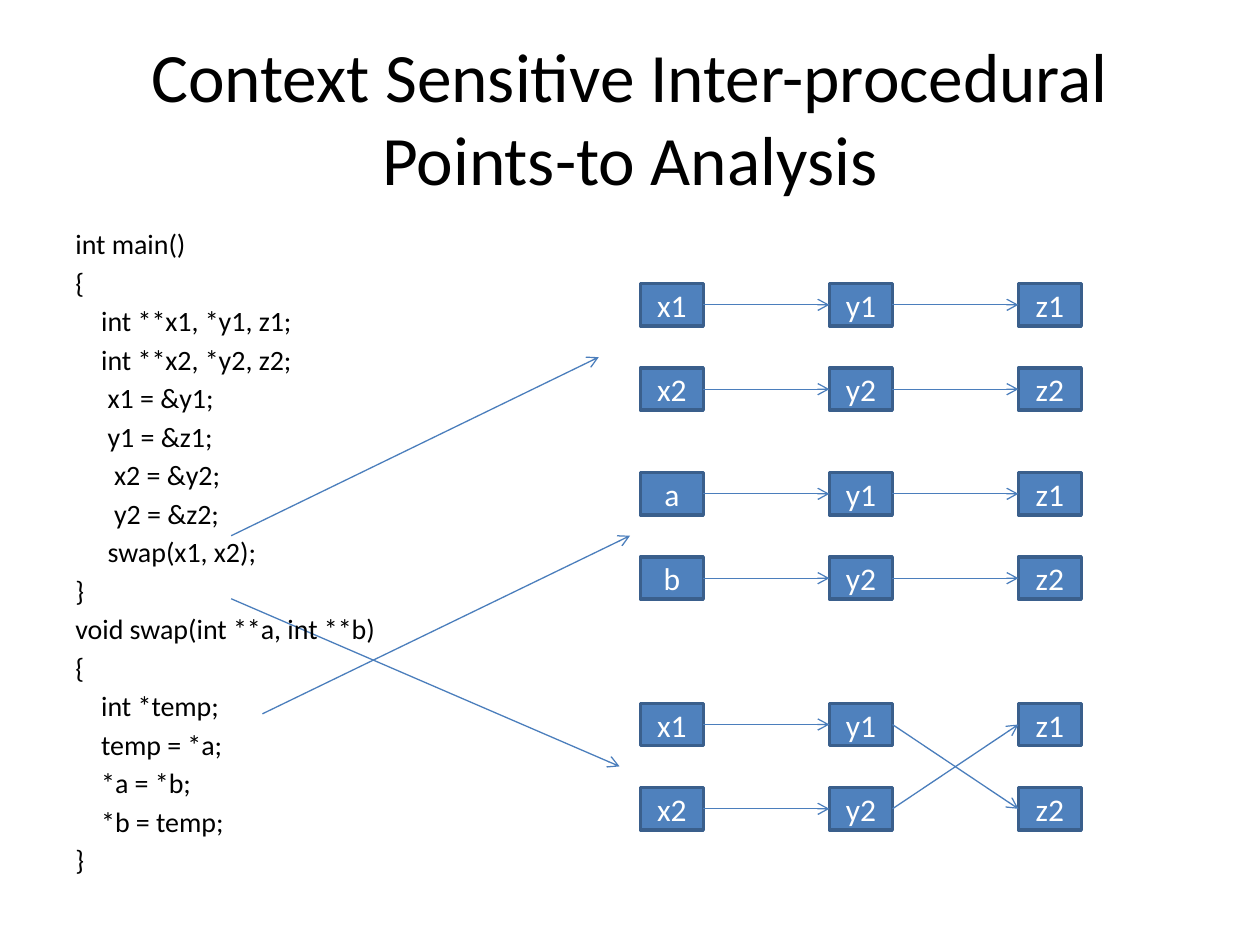
from dataclasses import dataclass

from lxml.etree import SubElement
from pptx import Presentation
from pptx.dml.color import RGBColor as RGB
from pptx.enum.shapes import MSO_CONNECTOR as LINK, MSO_SHAPE as SHAPE
from pptx.enum.text import MSO_ANCHOR as ANCHOR, PP_ALIGN as ALIGN
from pptx.oxml.ns import qn
from pptx.util import Cm, Pt


@dataclass
class Theme:
    font: str = "Calibri"
    ink: RGB = RGB(0x00, 0x00, 0x00)
    pale: RGB = RGB(0xFF, 0xFF, 0xFF)
    fill: RGB = RGB(0x4F, 0x81, 0xBD)
    edge: RGB = RGB(0x3A, 0x5F, 0x8C)
    wire: RGB = RGB(0x4B, 0x7E, 0xBC)
    head: float = 39.6
    code: float = 16
    node: float = 18
    gap: float = 2.8


class Page:
    def __init__(self, slide, theme):
        self.shapes = slide.shapes
        self.theme = theme

    def style(self, para, size, color, align):
        para.alignment = align
        for run in para.runs:
            run.font.name = self.theme.font
            run.font.size = Pt(size)
            run.font.color.rgb = color

    def frame(self, left, top, width, height):
        box = self.shapes.add_textbox(Cm(left), Cm(top), Cm(width), Cm(height))
        box.text_frame.word_wrap = True
        return box.text_frame

    def title(self, text, *area):
        frame = self.frame(*area)
        frame.vertical_anchor = ANCHOR.MIDDLE
        frame.text = text
        self.style(frame.paragraphs[0], self.theme.head, self.theme.ink, ALIGN.CENTER)

    def code(self, lines, step, *area):
        """Set (indent, text) lines, each indent counting steps in cm."""
        frame = self.frame(*area)
        frame.text = "\n".join(text for _, text in lines)
        for para, (indent, _) in zip(frame.paragraphs, lines):
            para.space_before = Pt(self.theme.gap)
            para._p.get_or_add_pPr().set("marL", str(Cm(indent * step)))
            self.style(para, self.theme.code, self.theme.ink, ALIGN.LEFT)

    def node(self, text, left, top, width=1.27, height=0.85):
        box = self.shapes.add_shape(
            SHAPE.RECTANGLE, Cm(left), Cm(top), Cm(width), Cm(height))
        box.shadow.inherit = False
        box.fill.solid()
        box.fill.fore_color.rgb = self.theme.fill
        box.line.color.rgb = self.theme.edge
        box.line.width = Pt(2)
        frame = box.text_frame
        frame.vertical_anchor = ANCHOR.MIDDLE
        frame.text = text
        self.style(frame.paragraphs[0], self.theme.node, self.theme.pale, ALIGN.CENTER)
        return box

    def arrow(self, x1=0, y1=0, x2=0, y2=0):
        line = self.shapes.add_connector(LINK.STRAIGHT, Cm(x1), Cm(y1), Cm(x2), Cm(y2))
        line.line.color.rgb = self.theme.wire
        line.line.width = Pt(0.75)
        SubElement(line.line._get_or_add_ln(), qn("a:tailEnd"), type="arrow")
        SubElement(line._element.spPr, qn("a:effectLst"))
        return line

    def join(self, start, end):
        line = self.arrow()
        line.begin_connect(start, 3)
        line.end_connect(end, 1)

    def graph(self, top, names, cross=False):
        """Draw two rows of three nodes, crossing the last links if asked."""
        rows = [
            [self.node(name, 12.91 + 3.81 * col, top + 2.13 * row - 0.43 * row)
             for col, name in enumerate((first, f"y{row + 1}", f"z{row + 1}"))]
            for row, first in enumerate(names)
        ]
        ends = rows[::-1] if cross else rows
        for row, end in zip(rows, ends):
            self.join(row[0], row[1])
            self.join(row[1], end[2])


CODE = [
    (0, "int main()"),
    (0, "{"),
    (4, "int **x1, *y1, z1;"),
    (4, "int **x2, *y2, z2;"),
    (5, "x1 = &y1;"),
    (5, "y1 = &z1;"),
    (6, "x2 = &y2;"),
    (6, "y2 = &z2;"),
    (5, "swap(x1, x2);"),
    (0, "}"),
    (0, "void swap(int **a, int **b)"),
    (0, "{"),
    (4, "int *temp;"),
    (4, "temp = *a;"),
    (4, "*a = *b;"),
    (4, "*b = temp;"),
    (0, "}"),
]


def main():
    deck = Presentation()
    deck.slide_width, deck.slide_height = Cm(25.4), Cm(19.05)
    page = Page(deck.slides.add_slide(deck.slide_layouts[6]), Theme())

    page.arrow(5.29, 14.39, 12.7, 10.8)
    page.arrow(4.66, 12.07, 12.49, 15.45)
    page.title("Context Sensitive Inter-procedural Points-to Analysis",
               1.27, 0.76, 22.86, 3.18)
    page.code(CODE, 0.13, 1.27, 4.45, 9.31, 13.97)
    page.graph(5.72, ("x1", "x2"))
    page.graph(9.53, ("a", "b"))
    page.graph(14.18, ("x1", "x2"), cross=True)
    page.arrow(4.66, 10.8, 12.07, 7.2)

    deck.save("out.pptx")


if __name__ == "__main__":
    main()
